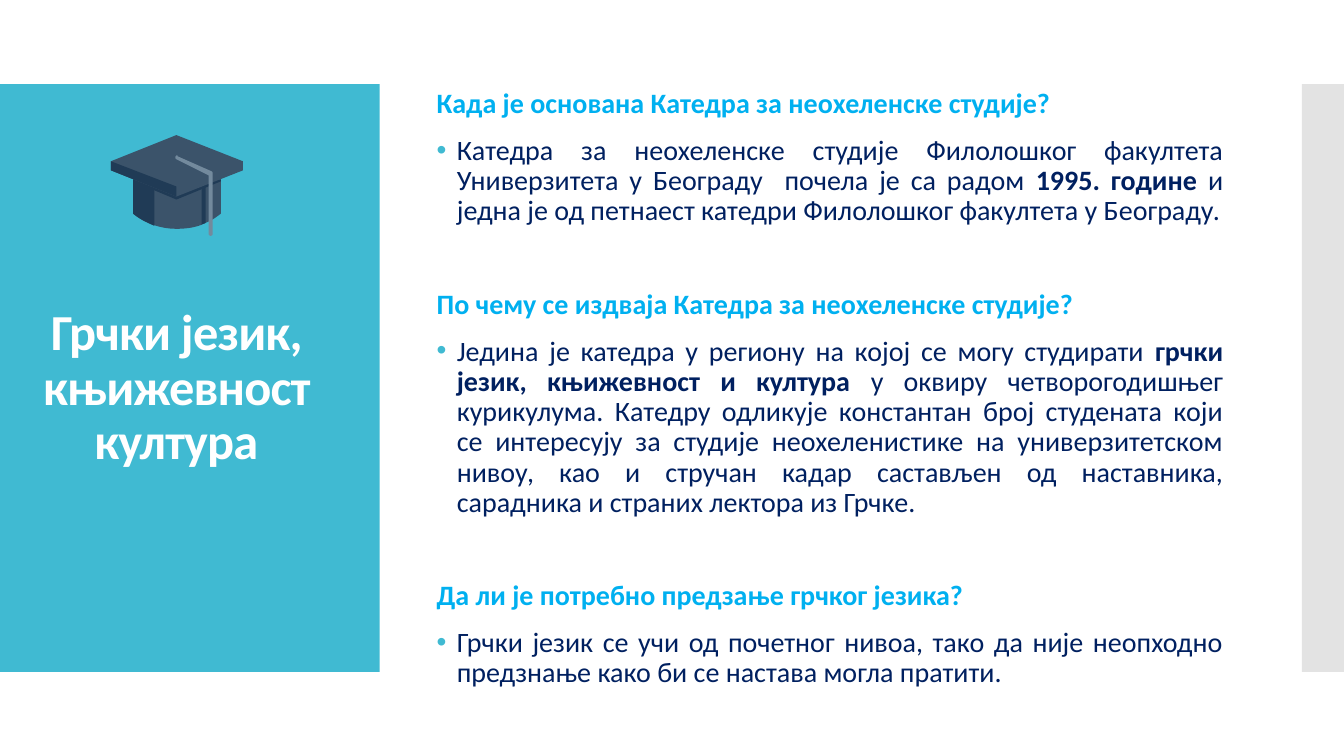
import pptx
import pptx.util
import pptx.dml.color
import pptx.enum.shapes
import pptx.enum.text
import pptx.oxml
import pptx.oxml.ns

COLORS = {
    "panel": "40BAD2",
    "edge": "C8C8C8",
    "title": "FFFFFF",
    "question": "00B0F0",
    "answer": "002060",
    "cap": "3B536A",
    "cap_shade": "203B56",
    "tassel": "738A9D",
}
FONT = "Calibri"
COLUMNS, ROWS = 160, 90
CAP_LEFT, CAP_TOP = 1.1, 1.34
CAP_UNIT = pptx.util.Inches(0.01)
CURVE_STEPS = 8

TITLE = "Грчки језик, књижевност култура"
SECTIONS = [
    ("Када је основана Катедра за неохеленске студије?", [
        ("Катедра за неохеленске студије Филолошког факултета Универзитета у Београду  почела је са радом ", False),
        ("1995. године ", True),
        ("и једна је од петнаест катедри Филолошког факултета у Београду.", False),
    ]),
    ("По чему се издваја Катедра за неохеленске студије?", [
        ("Једина је катедра у региону на којој се могу студирати ", False),
        ("грчки језик, књижевност и култура ", True),
        ("у оквиру четворогодишњег курикулума. Катедру одликује константан број студената који се интересују "
         "за студије неохеленистике на универзитетском нивоу, као и стручан кадар састављен од наставника, "
         "сарадника и страних лектора из Грчке.", False),
    ]),
    ("Да ли је потребно предзање грчког језика?", [
        ("Грчки језик се учи од почетног нивоа, тако да није неопходно предзнање "
         "како би се настава могла пратити.", False),
    ]),
]

CAP_PARTS = [
    ("cap", [(22, 44), (22, 78), ((34, 88), (50, 93), (65, 93)),
             ((74, 93), (82, 92), (90, 89)), ((91, 88), (93, 88), (94, 87)),
             ((100, 85), (105, 81), (109, 78)), (109, 44)]),
    ("cap_shade", [(22, 44), (22, 78), ((28, 83), (36, 87), (43, 90)), (43, 44)]),
    ("cap_shade", [(92, 49), ((91, 49), (90, 49), (90, 51)), (90, 89),
                   ((91, 88), (93, 88), (94, 87)), (94, 51),
                   ((94, 49), (93, 49), (92, 49))]),
    ("cap_shade", [(22, 44), (22, 46), (65, 64), (109, 46), (109, 44)]),
    ("cap", [(65, 0), (0, 26), (0, 35), (65, 61), (131, 35), (131, 26)]),
    ("cap_shade", [(0, 26), (0, 35), (65, 61), (65, 51)]),
    ("tassel", [(66, 20), ((64, 20), (63, 23), (65, 24)), (97, 40), (97, 98),
                ((97, 99), (98, 100), (99, 100)), ((100, 100), (101, 99), (101, 98)),
                (101, 38), ((101, 37), (101, 37), (100, 36)), (66, 21)]),
]


def color(name):
    return pptx.dml.color.RGBColor.from_string(COLORS[name])


def set_values(target, values):
    for name, value in values.items():
        setattr(target, name, value)


def grid(deck, left, top, width, height):
    column, row = deck.slide_width / COLUMNS, deck.slide_height / ROWS
    return [round(v) for v in (left * column, top * row, width * column, height * row)]


def paint(shape, name):
    shape.shadow.inherit = False
    shape.fill.solid()
    shape.fill.fore_color.rgb = color(name)
    shape.line.fill.background()


def add_panel(deck, page, place, name, opacity=100):
    panel = page.shapes.add_shape(pptx.enum.shapes.MSO_SHAPE.RECTANGLE, *grid(deck, *place))
    paint(panel, name)
    if opacity < 100:
        tone = panel.fill._xPr.find(".//" + pptx.oxml.ns.qn("a:srgbClr"))
        tone.append(pptx.oxml.parse_xml(
            f'<a:alpha {pptx.oxml.ns.nsdecls("a")} val="{opacity * 1000}"/>'))


def add_text_box(deck, page, place):
    frame = page.shapes.add_textbox(*grid(deck, *place)).text_frame
    set_values(frame, {
        "word_wrap": True,
        "auto_size": pptx.enum.text.MSO_AUTO_SIZE.NONE,
        "vertical_anchor": pptx.enum.text.MSO_ANCHOR.MIDDLE,
    })
    return frame


def add_span(para, text, size, name, bold):
    span = para.add_run()
    span.text = text
    set_values(span.font, {"name": FONT, "size": pptx.util.Pt(size), "bold": bold})
    span.font.color.rgb = color(name)
    return span


def add_bullet(para):
    properties = para._p.get_or_add_pPr()
    indent = pptx.util.Inches(0.2)
    properties.set("marL", str(indent))
    properties.set("indent", str(-indent))
    namespace = pptx.oxml.ns.nsdecls("a")
    for markup in (
        f'<a:buClr {namespace}><a:srgbClr val="{COLORS["panel"]}"/></a:buClr>',
        f'<a:buFont {namespace} typeface="Arial"/>',
        f'<a:buChar {namespace} char="•"/>',
    ):
        properties.append(pptx.oxml.parse_xml(markup))


def add_title(deck, page):
    para = add_text_box(deck, page, (1.7, 16.1, 38.6, 60.4)).paragraphs[0]
    set_values(para, {"alignment": pptx.enum.text.PP_ALIGN.CENTER, "line_spacing": 0.9})
    span = add_span(para, TITLE, 36, "title", True)
    span._r.get_or_add_rPr().set("spc", "-60")


def add_sections(deck, page):
    frame = add_text_box(deck, page, (50.8, 8.3, 96, 76))
    layout = {"alignment": pptx.enum.text.PP_ALIGN.JUSTIFY, "line_spacing": 0.9}
    for index, (question, answer) in enumerate(SECTIONS):
        heading = frame.add_paragraph() if index else frame.paragraphs[0]
        set_values(heading, {**layout, "space_before": pptx.util.Pt(45 if index else 0)})
        add_span(heading, question, 20, "question", True)
        para = frame.add_paragraph()
        set_values(para, {**layout, "space_before": pptx.util.Pt(12)})
        add_bullet(para)
        for text, bold in answer:
            add_span(para, text, 20, "answer", bold)


def curve_points(start, first, second, end):
    for step in range(1, CURVE_STEPS + 1):
        t = step / CURVE_STEPS
        weights = ((1 - t) ** 3, 3 * t * (1 - t) ** 2, 3 * t * t * (1 - t), t ** 3)
        corners = (start, first, second, end)
        yield tuple(sum(w * c[axis] for w, c in zip(weights, corners)) for axis in (0, 1))


def outline(segments):
    points = [segments[0]]
    for segment in segments[1:]:
        if len(segment) == 3:
            points.extend(curve_points(points[-1], *segment))
        else:
            points.append(segment)
    left, top = pptx.util.Inches(CAP_LEFT), pptx.util.Inches(CAP_TOP)
    return [(round(left + x * CAP_UNIT), round(top + y * CAP_UNIT)) for x, y in points]


def add_cap(page):
    group = page.shapes.add_group_shape()
    for name, segments in CAP_PARTS:
        points = outline(segments)
        builder = group.shapes.build_freeform(*points[0], scale=1.0)
        builder.add_line_segments(points[1:], close=True)
        paint(builder.convert_to_shape(), name)


def main():
    deck = pptx.Presentation()
    set_values(deck, {"slide_width": pptx.util.Inches(13.33), "slide_height": pptx.util.Inches(7.5)})
    page = deck.slides.add_slide(deck.slide_layouts[6])
    add_panel(deck, page, (0, 10, 45.2, 70), "panel")
    add_panel(deck, page, (155, 10, 5, 70), "edge", opacity=50)
    add_title(deck, page)
    add_sections(deck, page)
    add_cap(page)
    deck.save("out.pptx")


if __name__ == "__main__":
    main()
